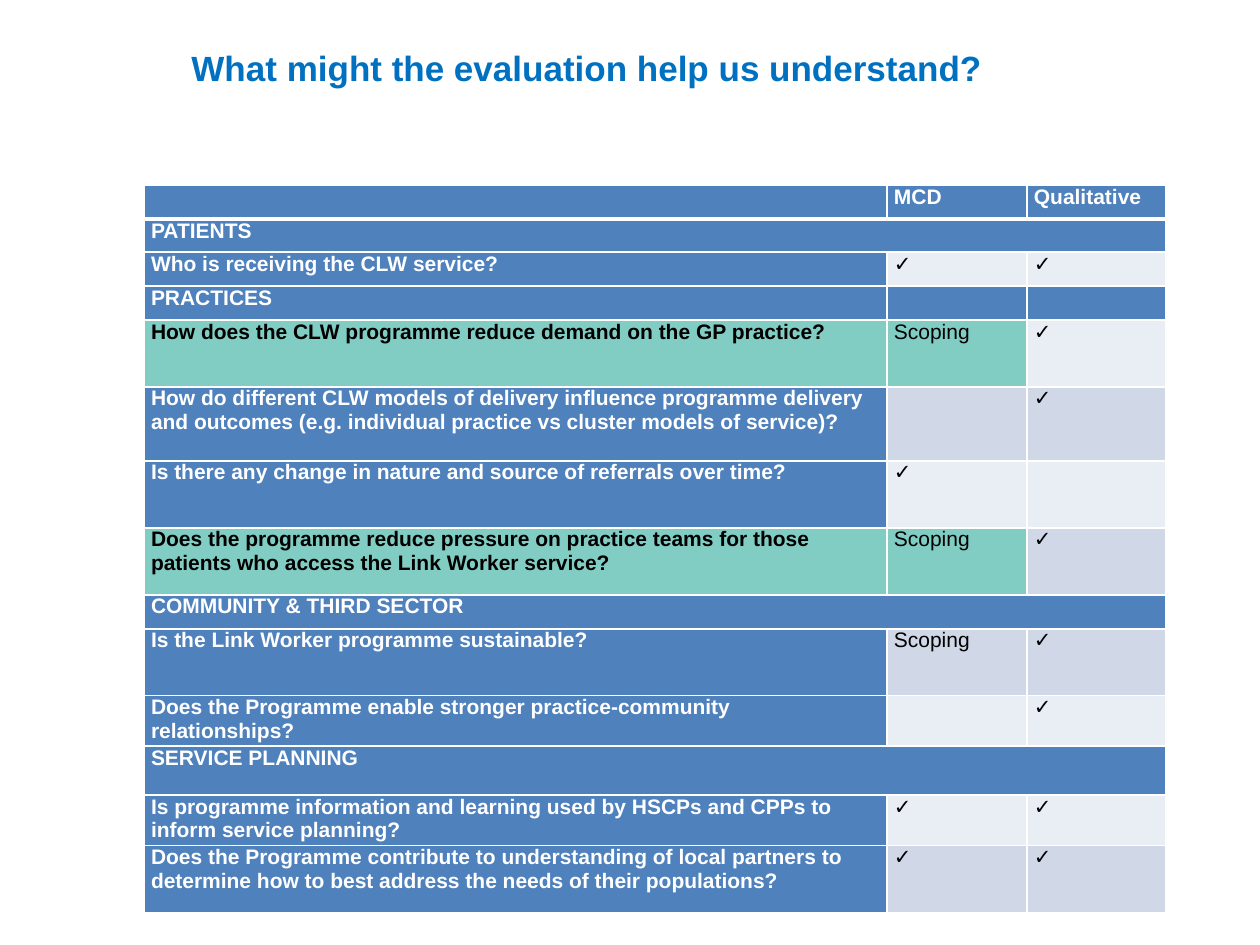
from dataclasses import dataclass

from pptx import Presentation
from pptx import util as u
from pptx.dml.color import RGBColor
from pptx.enum import text
from pptx.oxml import parse_xml
from pptx.oxml.ns import nsdecls


@dataclass(frozen=True)
class Theme:
    font: str = "Arial"
    title: str = "0070C0"
    blue: str = "4F81BD"
    green: str = "81CDC4"
    bands: tuple = ("E9EDF4", "D0D8E8")
    white: str = "FFFFFF"
    black: str = "000000"
    head: int = 20
    body: int = 12
    line: int = 1
    rule: int = 3


def px(n):
    return round(n * 914400 / 126)


class Deck:
    def __init__(self, theme):
        self.theme = theme
        self.prs = Presentation()
        self.prs.slide_width, self.prs.slide_height = px(1260), px(945)
        self.slide = self.prs.slides.add_slide(self.prs.slide_layouts[6])

    def run(self, para, words, size, color, bold):
        run = para.add_run()
        run.text = words
        font = run.font
        font.name, font.size, font.bold = self.theme.font, u.Pt(size), bold
        font.color.rgb = RGBColor.from_string(color)

    def title(self, words, x, y, w, h):
        frame = self.slide.shapes.add_textbox(px(x), px(y), px(w), px(h)).text_frame
        frame.word_wrap = True
        frame.vertical_anchor = text.MSO_ANCHOR.MIDDLE
        para = frame.paragraphs[0]
        para.alignment = text.PP_ALIGN.CENTER
        self.run(para, words, self.theme.head, self.theme.title, True)

    def border(self, cell, base):
        props = cell._tc.get_or_add_tcPr()
        widths = dict(lnL=self.theme.line, lnR=self.theme.line, lnT=self.theme.line, lnB=base)
        for spot, (tag, width) in enumerate(widths.items()):
            props.insert(spot, parse_xml(
                f'<a:{tag} {nsdecls("a")} w="{u.Pt(width)}"><a:solidFill>'
                f'<a:srgbClr val="{self.theme.white}"/></a:solidFill></a:{tag}>'))

    def cell(self, cell, words, fill, color, bold, base):
        cell.margin_left = cell.margin_right = px(7)
        cell.margin_top = cell.margin_bottom = 0
        cell.fill.solid()
        cell.fill.fore_color.rgb = RGBColor.from_string(fill)
        self.border(cell, base)
        para = cell.text_frame.paragraphs[0]
        if words:
            self.run(para, words, self.theme.body, color, bold)
        else:  # keeps an empty cell from stretching its row
            para._p.get_or_add_endParaRPr().set("sz", str(self.theme.body * 100))

    def table(self, rows, x, y, cols):
        t = self.theme
        grid = self.slide.shapes.add_table(
            len(rows), len(cols), px(x), px(y), px(sum(cols)),
            px(sum(row[1] for row in rows))).table
        for col, width in zip(grid.columns, cols):
            col.width = px(width)
        for i, (kind, high, *words) in enumerate(rows):
            grid.rows[i].height = px(high)
            if kind == "span":
                grid.cell(i, 0).merge(grid.cell(i, len(cols) - 1))
            for j in range(len(cols)):
                strong = j == 0 or kind in ("head", "span", "part")
                fill = t.blue if strong else t.bands[i % 2]
                color = t.white if strong else t.black
                if kind == "scope" and j < 2:
                    fill, color = t.green, t.black
                label = words[j] if j < len(words) else ""
                base = t.rule if kind == "head" else t.line
                self.cell(grid.cell(i, j), label, fill, color, strong, base)


TICK = "✓"
# Kind of row, height, then the text of each column
ROWS = [
    ("head", 34, "", "MCD", "Qualitative"),
    ("span", 33, "PATIENTS"),
    ("ask", 34, "Who is receiving the CLW service?", TICK, TICK),
    ("part", 34, "PRACTICES"),
    ("scope", 67, "How does the CLW programme reduce demand on the GP practice?",
     "Scoping", TICK),
    ("ask", 74, "How do different CLW models of delivery influence programme delivery "
     "and outcomes (e.g. individual practice vs cluster models of service)?", "", TICK),
    ("ask", 67, "Is there any change in nature and source of referrals over time?", TICK),
    ("scope", 67, "Does the programme reduce pressure on practice teams for those "
     "patients who access the Link Worker service?", "Scoping", TICK),
    ("span", 34, "COMMUNITY & THIRD SECTOR"),
    ("ask", 67, "Is the Link Worker programme sustainable?", "Scoping", TICK),
    ("ask", 49, "Does the Programme enable stronger practice-community relationships?",
     "", TICK),
    ("span", 49, "SERVICE PLANNING"),
    ("ask", 49, "Is programme information and learning used by HSCPs and CPPs to "
     "inform service planning?", TICK, TICK),
    ("ask", 67, "Does the Programme contribute to understanding of local partners to "
     "determine how to best address the needs of their populations?", TICK, TICK),
]


def main():
    deck = Deck(Theme())
    # Heading
    deck.title("What might the evaluation help us understand?", 44, 27, 1086, 80)
    # Questions by theme and method
    deck.table(ROWS, 144, 185, (743, 140, 139))
    deck.prs.save("out.pptx")


if __name__ == "__main__":
    main()
